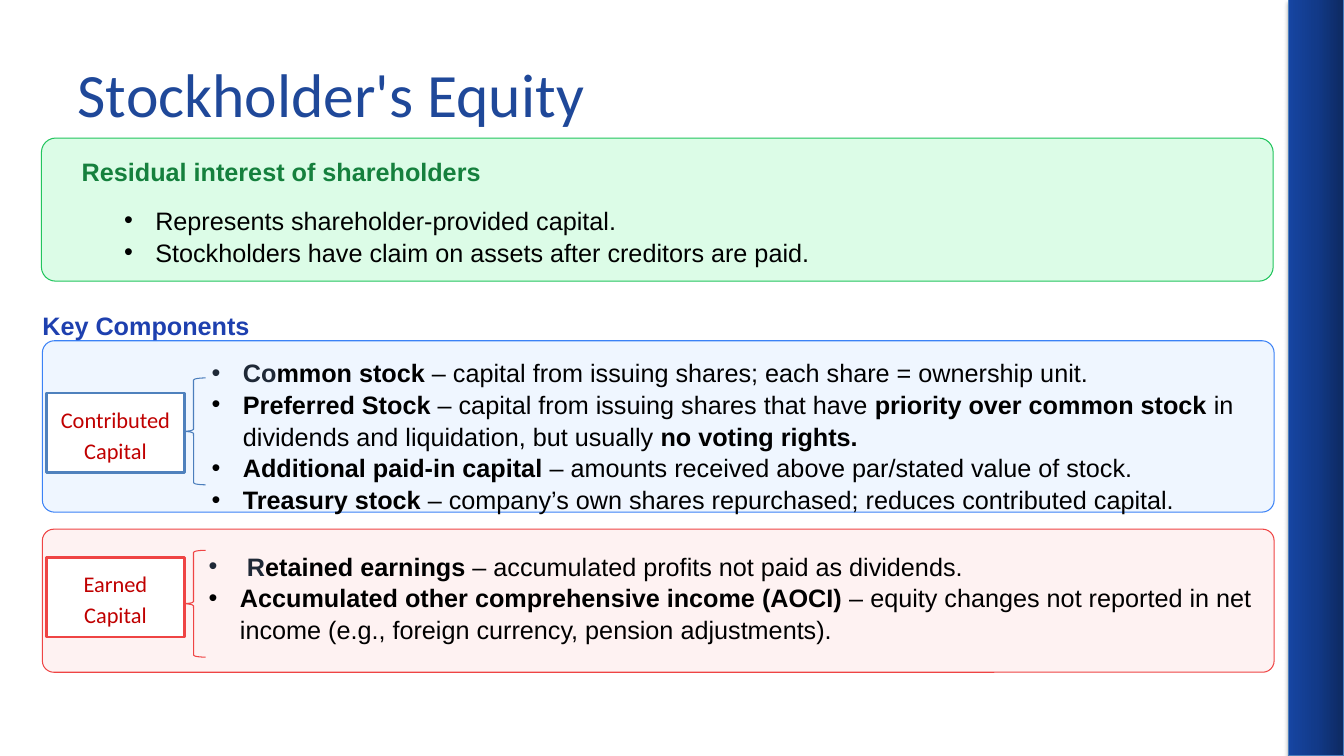
"""Build the Stockholder's Equity slide."""
import copy
import dataclasses
import typing

import lxml.etree
import pptx
import pptx.dml.color
import pptx.enum.shapes
import pptx.enum.text
import pptx.oxml
import pptx.oxml.ns
import pptx.util

Shape = pptx.enum.shapes.MSO_SHAPE
Pt = pptx.util.Pt
Inches = pptx.util.Inches
SLIDE_WIDTH, SLIDE_HEIGHT = Inches(13.33), Inches(7.5)


@dataclasses.dataclass(frozen=True)
class Theme:
    title: str = "1F4899"
    ink: str = "000000"
    slate: str = "1F2937"
    green_text: str = "15803D"
    blue_text: str = "1E40AF"
    label_text: str = "C00000"
    white: str = "FFFFFF"
    green: str = "22C55E"
    green_tint: str = "DCFCE7"
    red: str = "EF4444"
    red_tint: str = "FEF2F2"
    blue: str = "3B82F6"
    blue_tint: str = "EFF6FF"
    brace: str = "4B7EBC"
    label_line: str = "4F81BD"
    band: tuple[str, ...] = ("0D2960", "123A89", "1645A2")
    title_size: int = 44
    body_size: int = 18
    label_size: int = 16
    thin: float = 0.75
    thick: float = 2
    heading_font: str = "Calibri"
    body_font: str = "Arial"


THEME = Theme()


class Area(typing.NamedTuple):
    """Left, top, width and height as percentages of the slide."""
    left: float
    top: float
    width: float
    height: float

    def lengths(self) -> tuple[int, int, int, int]:
        sides = (SLIDE_WIDTH, SLIDE_HEIGHT, SLIDE_WIDTH, SLIDE_HEIGHT)
        return tuple(round(share * side / 100) for share, side in zip(self, sides))


@dataclasses.dataclass(frozen=True)
class Figure:
    area: Area
    line: str
    fill: str | None = None
    kind: Shape = Shape.ROUNDED_RECTANGLE
    corner: float | None = None
    weight: float = THEME.thin
    text: str = ""


class Span(typing.NamedTuple):
    text: str
    bold: bool = False
    colour: str | None = None


class Heading(typing.NamedTuple):
    holder: int
    area: Area
    text: str
    colour: str
    pitch: float


class Listing(typing.NamedTuple):
    holder: int | None
    area: Area
    items: list[list[Span]]


CARDS = [
    Figure(Area(3.08, 18.27, 91.65, 18.93), THEME.green, THEME.green_tint, corner=0.1),
    Figure(Area(3.15, 70, 91.65, 18.93), THEME.red, THEME.red_tint, corner=0.08),
    Figure(Area(3.15, 45.07, 91.65, 22.67), THEME.blue, THEME.blue_tint, corner=0.07),
]
MARKERS = [
    Figure(Area(13.5, 50, 1.8, 14.13), THEME.brace, kind=Shape.LEFT_BRACE),
    Figure(Area(3.45, 52, 10.28, 10.53), THEME.label_line, THEME.white,
           Shape.RECTANGLE, weight=THEME.thick, text="Contributed Capital"),
    Figure(Area(13.5, 72.8, 1.8, 14.13), THEME.red, kind=Shape.LEFT_BRACE),
    Figure(Area(3.45, 73.73, 10.28, 10.53), THEME.red, THEME.white,
           Shape.RECTANGLE, weight=THEME.thick, text="Earned Capital"),
]
HEADINGS = [
    Heading(1, Area(6.08, 20, 89.7, 4.67), "Residual interest of shareholders",
            THEME.green_text, 25.2),
    Heading(3, Area(3.15, 40.67, 90.08, 4.4), "Key Components", THEME.blue_text, 23.8),
]
LISTINGS = [
    Listing(2, Area(9.23, 26.93, 56.1, 8.93), [
        [Span("Represents shareholder-provided capital.")],
        [Span("Stockholders have claim on assets after creditors are paid.")],
    ]),
    Listing(4, Area(15.75, 47.07, 78.6, 20.53), [
        [Span("Co", True, THEME.slate), Span("mmon stock", True),
         Span(" – capital from issuing shares; each share = ownership unit.")],
        [Span("Preferred Stock", True),
         Span(" – capital from issuing shares that have "),
         Span("priority over common stock ", True),
         Span("in dividends and liquidation, but usually "),
         Span("no voting rights.", True)],
        [Span("Additional paid-in capital", True),
         Span(" – amounts received above par/stated value of stock.")],
        [Span("Treasury stock", True),
         Span(" – company’s own shares repurchased; reduces contributed capital.")],
    ]),
    Listing(None, Area(15.53, 72.67, 78.6, 13.87), [
        [Span(" R", True, THEME.slate), Span("etained earnings", True),
         Span(" – accumulated profits not paid as dividends.")],
        [Span("Accumulated other comprehensive income (AOCI)", True),
         Span(" – equity changes not reported in net income "
              "(e.g., foreign currency, pension adjustments).")],
    ]),
]


def rgb(value: str) -> pptx.dml.color.RGBColor:
    return pptx.dml.color.RGBColor.from_string(value)


def style(para, font: str, size: int, colour: str, bold: bool | None = None) -> None:
    para.font.name, para.font.size, para.font.bold = font, Pt(size), bold
    para.font.color.rgb = rgb(colour)


def draw_figure(page, figure: Figure):
    box = page.shapes.add_shape(figure.kind, *figure.area.lengths())
    box.shadow.inherit = False
    if figure.fill:
        box.fill.solid()
        box.fill.fore_color.rgb = rgb(figure.fill)
    else:
        box.fill.background()
    box.line.color.rgb = rgb(figure.line)
    box.line.width = Pt(figure.weight)
    if figure.corner is not None:
        box.adjustments[0] = figure.corner
    if figure.text:
        para = box.text_frame.paragraphs[0]
        para.text = figure.text
        para.alignment = pptx.enum.text.PP_ALIGN.CENTER
        para.line_spacing, para.space_after = 1.15, Pt(10)
        style(para, THEME.heading_font, THEME.label_size, THEME.label_text)
    return box


def draw_band(page) -> None:
    band = draw_figure(page, Figure(Area(95.85, 0, 4.15, 100), THEME.brace, kind=Shape.RECTANGLE))
    band.fill.gradient()
    band.fill.gradient_angle = 180
    stops = band.element.find(".//" + pptx.oxml.ns.qn("a:gsLst"))
    stops.insert(1, copy.deepcopy(stops[0]))
    for stop, position, colour in zip(band.fill.gradient_stops, (0, 0.5, 1), THEME.band):
        stop.position, stop.color.rgb = position, rgb(colour)
    effects = band.element.spPr.find(pptx.oxml.ns.qn("a:effectLst"))
    effects.append(pptx.oxml.parse_xml(
        f'<a:outerShdw {pptx.oxml.ns.nsdecls("a")} blurRad="{Pt(3.1)}" dist="{Pt(1.8)}" '
        'dir="5400000"><a:srgbClr val="000000"><a:alpha val="35000"/></a:srgbClr></a:outerShdw>'))


def place_text(page, holder: int | None, area: Area):
    """Return the text frame of a raised placeholder or of a new text box."""
    if holder is None:
        box = page.shapes.add_textbox(*area.lengths())
    else:
        box = page.placeholders[holder]
        box.left, box.top, box.width, box.height = area.lengths()
        box.element.getparent().append(box.element)
    frame = box.text_frame
    frame.word_wrap = True
    frame.auto_size = pptx.enum.text.MSO_AUTO_SIZE.NONE
    frame.vertical_anchor = pptx.enum.text.MSO_ANCHOR.TOP
    frame.margin_left = frame.margin_top = frame.margin_right = frame.margin_bottom = 0
    return frame


def draw_title(page) -> None:
    title = page.shapes.title
    title.left, title.top, title.width, title.height = Area(5.03, 4, 90, 16.67).lengths()
    title.text_frame.text = "Stockholder's Equity"
    title.text_frame.vertical_anchor = pptx.enum.text.MSO_ANCHOR.MIDDLE
    para = title.text_frame.paragraphs[0]
    para.alignment = pptx.enum.text.PP_ALIGN.LEFT
    style(para, THEME.heading_font, THEME.title_size, THEME.title)
    title.element.getparent().append(title.element)


def draw_heading(page, heading: Heading) -> None:
    para = place_text(page, heading.holder, heading.area).paragraphs[0]
    para.text = heading.text
    para.line_spacing, para.space_before = Pt(heading.pitch), Pt(0)
    style(para, THEME.body_font, THEME.body_size, heading.colour, True)


def draw_listing(page, listing: Listing) -> None:
    frame = place_text(page, listing.holder, listing.area)
    for index, spans in enumerate(listing.items):
        para = frame.add_paragraph() if index else frame.paragraphs[0]
        properties = para._p.get_or_add_pPr()
        properties.set("marL", str(Inches(0.31)))
        properties.set("indent", str(-Inches(0.31)))
        for tag, key, value in (("a:buFont", "typeface", THEME.body_font), ("a:buChar", "char", "•")):
            lxml.etree.SubElement(properties, pptx.oxml.ns.qn(tag)).set(key, value)
        para.line_spacing, para.space_before = 1.05, Pt(0)
        style(para, THEME.body_font, THEME.body_size, THEME.ink)
        for span in spans:
            run = para.add_run()
            run.text, run.font.bold = span.text, span.bold
            if span.colour:
                run.font.color.rgb = rgb(span.colour)


def main() -> None:
    deck = pptx.Presentation()
    deck.slide_width, deck.slide_height = SLIDE_WIDTH, SLIDE_HEIGHT
    page = deck.slides.add_slide(deck.slide_layouts.get_by_name("Comparison"))
    draw_band(page)
    for card in CARDS:
        draw_figure(page, card)
    draw_title(page)
    for heading in HEADINGS:
        draw_heading(page, heading)
    for listing in LISTINGS:
        draw_listing(page, listing)
    for marker in MARKERS:
        draw_figure(page, marker)
    deck.save("out.pptx")


if __name__ == "__main__":
    main()
